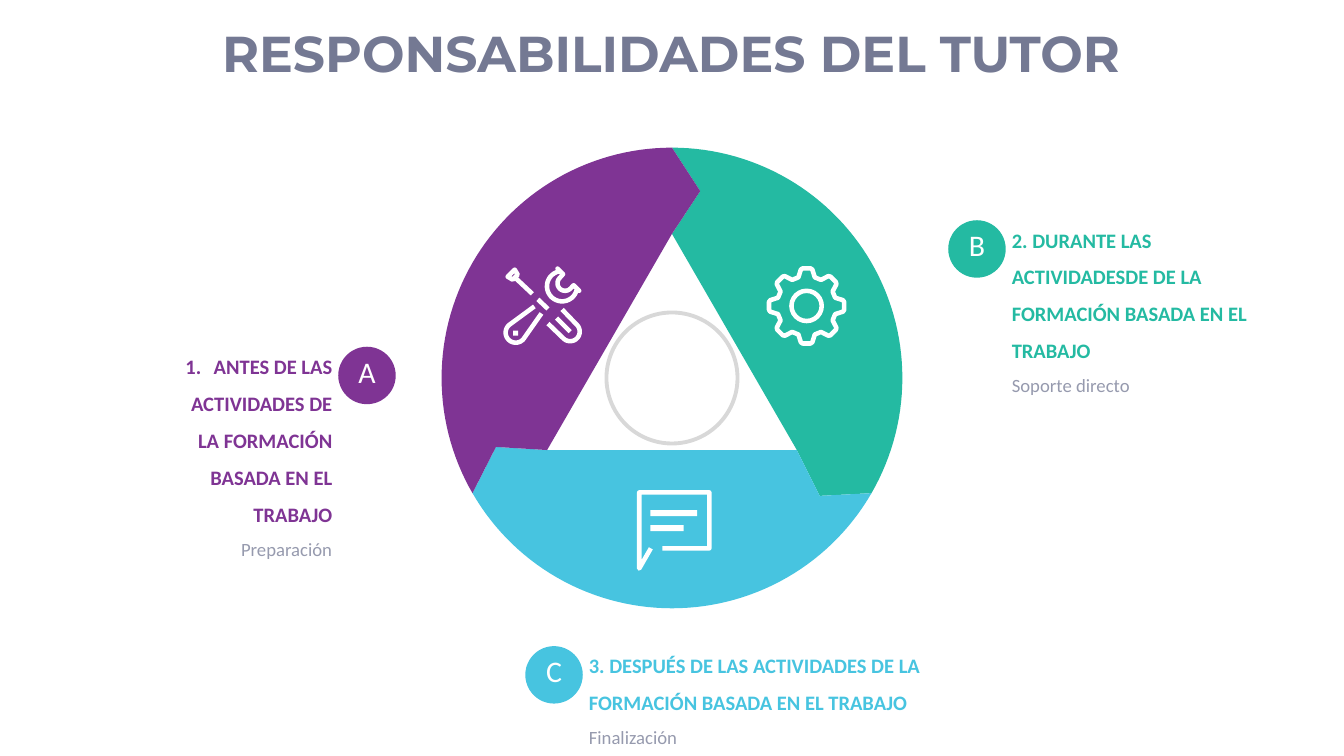
from math import cos, radians, sin

from lxml import etree
from pptx import Presentation
from pptx import util as u
from pptx.dml.color import RGBColor
from pptx.enum import shapes, text
from pptx.oxml.ns import qn

PURPLE, TEAL, SKY = "7F3494", "24BAA2", "47C4E0"
WHITE, SLATE, GREY, SILVER = "FFFFFF", "747993", "969AAE", "D8D8D8"

TITLE = "RESPONSABILIDADES DEL TUTOR"
STEPS = [
    dict(letter="A", color=PURPLE, badge=(6.71, 6.88), box=(2.9, 6.78, 3.69, 4.38), numbered=True,
         head="ANTES DE LAS ACTIVIDADES DE LA FORMACIÓN BASADA EN EL TRABAJO", note="Preparación"),
    dict(letter="B", color=TEAL, badge=(18.81, 4.37), box=(20.07, 4.27, 5.55, 3.63), numbered=False,
         head="2. DURANTE LAS ACTIVIDADESDE DE LA FORMACIÓN BASADA EN EL TRABAJO", note="Soporte directo"),
    dict(letter="C", color=SKY, badge=(10.42, 12.82), box=(11.68, 12.72, 7.62, 2.15), numbered=False,
         head="3. DESPUÉS DE LAS ACTIVIDADES DE LA FORMACIÓN BASADA EN EL TRABAJO", note="Finalización"),
]
BADGE = 1.14
CENTER, RADIUS, RING = (13.33, 7.5), 4.57, 1.3
SEGMENTS = [TEAL, SKY, PURPLE]
STROKE = 6.5

GEAR, HUB = (16, 6.07), 0.3
TOOTH = [(0.59, -16), (0.73, -9), (0.75, -6)]
BUBBLE = [(13.14, 10.88), (14.07, 10.88), (14.07, 9.77), (12.68, 9.77), (12.68, 11.28), (12.91, 10.88)]
BUBBLE_LINES = [(12.9, 10.12, 0.93, 0.12), (12.9, 10.42, 0.66, 0.12)]
TOOL_BARS = [((10.24, 5.53), (10.56, 5.83)), ((10.67, 5.94), (10.87, 6.13)), ((11.04, 6.31), (11.31, 6.58))]
TIP = [(10.07, 5.49), (10.21, 5.35), (10.27, 5.45), (10.17, 5.55)]
TOOL_HOLE = (10.18, 6.56, 0.1, 0.1)


def size(inches):
    return u.Cm(inches * 2.54)


def rgb(value):
    return RGBColor.from_string(value)


def polar(center, r, angle):
    a = radians(angle)
    return center[0] + r * sin(a), center[1] - r * cos(a)


def arc(center, r, start, end, steps=24):
    return [polar(center, r, start + (end - start) * i / steps) for i in range(steps + 1)]


def paint(sp, fill, line=None, width=STROKE):
    sp.shadow.inherit = False
    if fill:
        sp.fill.solid()
        sp.fill.fore_color.rgb = rgb(fill)
    else:
        sp.fill.background()
    if line:
        sp.line.color.rgb = rgb(line)
        sp.line.width = u.Pt(width)
    else:
        sp.line.fill.background()
    return sp


def outline(parent, points, fill=None, line=None, close=True):
    points = [(size(x), size(y)) for x, y in points]
    builder = parent.build_freeform(*points[0], scale=1.0)
    builder.add_line_segments(points[1:], close=close)
    return paint(builder.convert_to_shape(), fill, line)


def preset(parent, kind, box, fill, line=None, width=STROKE):
    return paint(parent.add_shape(kind, *map(size, box)), fill, line, width)


def circle(parent, center, r, line, width=STROKE):
    box = (center[0] - r, center[1] - r, 2 * r, 2 * r)
    return preset(parent, shapes.MSO_SHAPE.OVAL, box, None, line, width)


def bar(parent, start, end):
    c = parent.add_connector(shapes.MSO_CONNECTOR.STRAIGHT, *map(size, (*start, *end)))
    c.line.color.rgb = rgb(WHITE)
    c.line.width = u.Pt(STROKE)
    etree.SubElement(c._element.spPr, qn("a:effectLst"))


def style(p, pt, color, bold=False, font="Calibri", align=text.PP_ALIGN.LEFT, spacing=1.0):
    p.alignment, p.line_spacing = align, spacing
    for r in p.runs:
        r.font.size, r.font.bold, r.font.name = u.Pt(pt), bold, font
        r.font.color.rgb = rgb(color)


def bare(tf):
    tf.margin_left = tf.margin_right = tf.margin_top = tf.margin_bottom = 0
    tf.auto_size = text.MSO_AUTO_SIZE.NONE
    return tf


def number(p, color, indent=0.56):
    pPr = p._p.get_or_add_pPr()
    pPr.set("marL", str(size(indent)))
    pPr.set("indent", str(-size(indent)))
    clr = etree.SubElement(pPr, qn("a:buClr"))
    etree.SubElement(clr, qn("a:srgbClr"), val=color)
    etree.SubElement(pPr, qn("a:buFont"), typeface="+mj-lt")
    etree.SubElement(pPr, qn("a:buAutoNum"), type="arabicPeriod")


def add_title(s):
    sp = s.shapes.title
    sp.left, sp.top, sp.width, sp.height = map(size, (1.11, 0.39, 24.4, 1.44))
    tf = bare(sp.text_frame)
    tf.vertical_anchor = text.MSO_ANCHOR.MIDDLE
    tf.text = TITLE
    style(tf.paragraphs[0], 72, SLATE, True, "Montserrat", text.PP_ALIGN.CENTER, 0.9)


def add_wheel(s):
    circle(s.shapes, CENTER, RING, SILVER, 5.5)
    edge = [(3.75, 128.6), (2.86, 120), (2.86, 0), (3.75, 8.6)]
    for i, color in enumerate(SEGMENTS):
        start = 120 * i
        rim = arc(CENTER, RADIUS, start, start + 120, 60)
        outline(s.shapes, rim + [polar(CENTER, r, start + a) for r, a in edge], color)


def add_gear(s):
    g = s.shapes.add_group_shape().shapes
    tooth = TOOTH + [(r, -a) for r, a in reversed(TOOTH)]
    outline(g, [polar(GEAR, r, 45 * i + a) for i in range(8) for r, a in tooth], line=WHITE)
    circle(g, GEAR, HUB, WHITE)


def add_bubble(s):
    g = s.shapes.add_group_shape().shapes
    outline(g, BUBBLE, line=WHITE, close=False)
    for box in BUBBLE_LINES:
        preset(g, shapes.MSO_SHAPE.RECTANGLE, box, WHITE)


def add_tools(s):
    g = s.shapes.add_group_shape().shapes
    for start, end in TOOL_BARS:
        bar(g, start, end)
    outline(g, TIP, line=WHITE)
    driver = [(10.6, 6.08)] + arc((10.23, 6.6), 0.2, -40, -230) + [(10.74, 6.22)]
    handle = [(10.87, 6.42)] + arc((11.31, 6.58), 0.19, 225, 45) + [(11.15, 6.14)]
    for points in (driver, handle):
        outline(g, points, line=WHITE, close=False)
    jaw = arc((11.15, 5.68), 0.3, 100, 350) + [(11.06, 5.33), (11.17, 5.44)]
    jaw += arc((11.21, 5.62), 0.15, 315, 135) + [(11.38, 5.66), (11.49, 5.77)]
    outline(g, jaw, line=WHITE)
    preset(g, shapes.MSO_SHAPE.RECTANGLE, TOOL_HOLE, WHITE)


def add_step(s, step):
    align = text.PP_ALIGN.RIGHT if step["numbered"] else text.PP_ALIGN.LEFT
    tf = bare(s.shapes.add_textbox(*map(size, step["box"])).text_frame)
    tf.word_wrap = True
    tf.text = step["head"]
    head, note = tf.paragraphs[0], tf.add_paragraph()
    note.text = step["note"]
    style(head, 29.3, step["color"], True, align=align, spacing=1.5)
    style(note, 26.7, GREY, align=align, spacing=1.5)
    if step["numbered"]:
        number(head, step["color"])

    sp = preset(s.shapes, shapes.MSO_SHAPE.OVAL, (*step["badge"], BADGE, BADGE), step["color"])
    tf = bare(sp.text_frame)
    tf.margin_bottom = size(0.16)
    tf.word_wrap = False
    tf.vertical_anchor = text.MSO_ANCHOR.MIDDLE
    tf.text = step["letter"]
    style(tf.paragraphs[0], 42.7, WHITE, align=text.PP_ALIGN.CENTER)


def main():
    prs = Presentation()
    prs.slide_width, prs.slide_height = size(26.66), size(15)
    s = prs.slides.add_slide(prs.slide_layouts[5])
    add_title(s)
    add_wheel(s)
    add_gear(s)
    for step in STEPS:
        add_step(s, step)
    add_bubble(s)
    add_tools(s)
    prs.save("out.pptx")


if __name__ == "__main__":
    main()
